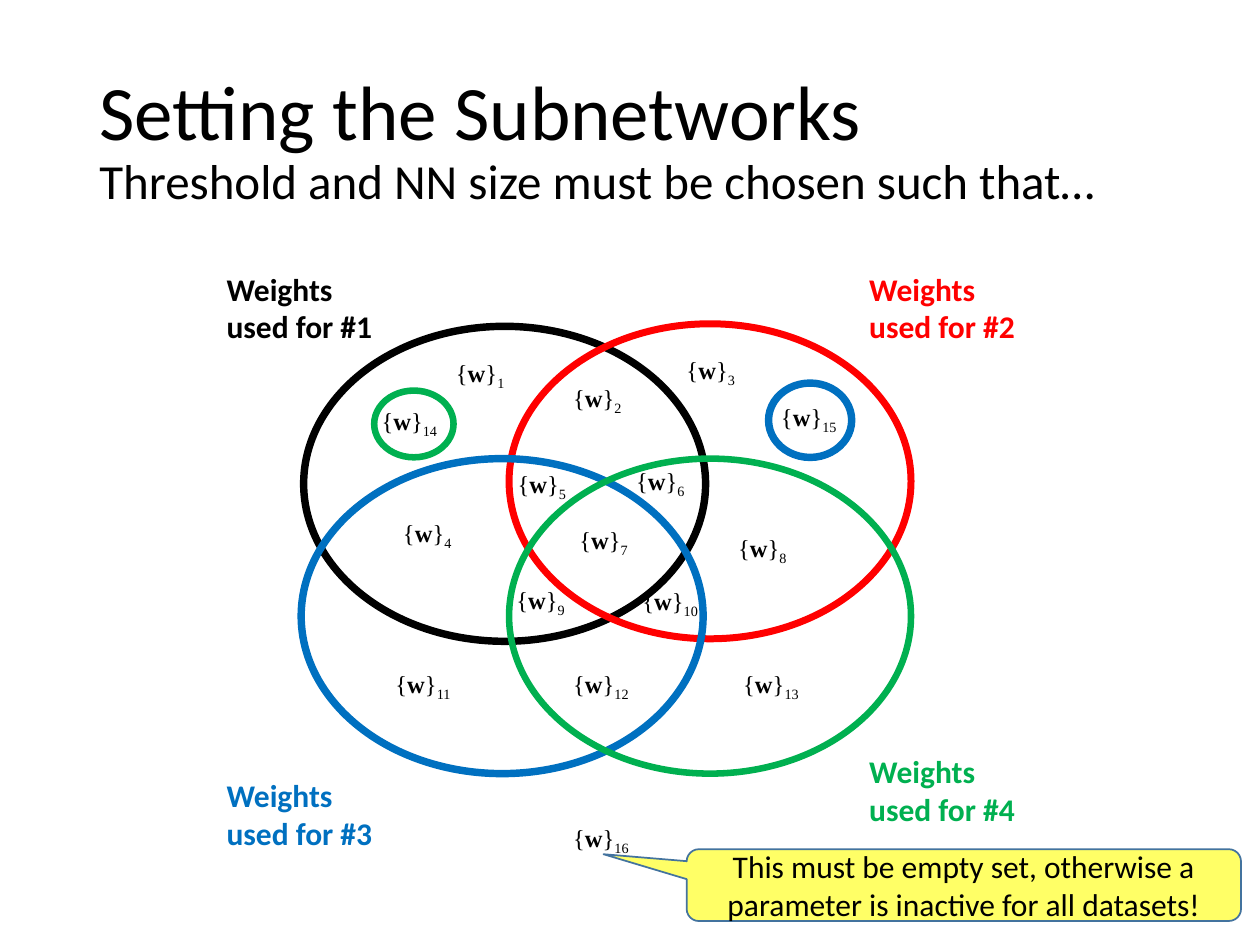
from dataclasses import dataclass

from pptx import Presentation
from pptx.dml.color import RGBColor as RGB
from pptx.enum.shapes import MSO_SHAPE as Shape
from pptx.enum.text import MSO_ANCHOR as Anchor, MSO_AUTO_SIZE as Auto, PP_ALIGN as Align
from pptx.util import Emu, Pt

PX = 9144  # 100 px to the inch


@dataclass(frozen=True)
class Theme:
    black: str = "000000"
    red: str = "FF0000"
    blue: str = "0070C0"
    green: str = "00B050"
    note: str = "FFFF66"
    edge: str = "43739E"
    sans: str = "Calibri"
    serif: str = "Times New Roman"
    title: int = 44
    lead: int = 28
    body: int = 18
    math: int = 14


T = Theme()

# Centre-line ellipses, one for each dataset: left, top, colour, line width
SETS = [
    (241, 259, T.black, 4.25),
    (404, 257, T.red, 4),
    (239, 364, T.blue, 4.25),
    (404, 364, T.green, 3.75),
]
# Dataset captions: number, left, top, colour
NAMES = [
    (1, 170, 209, T.black),
    (2, 680, 209, T.red),
    (4, 680, 592, T.green),
    (3, 170, 611, T.blue),
]
# Weight groups by region: index -> left, top
GROUPS = {
    1: (352, 279), 2: (445, 299), 3: (535, 277), 4: (310, 406),
    5: (401, 367), 6: (495, 365), 9: (400, 459), 10: (500, 460),
    7: (450, 412), 8: (576, 418), 11: (304, 526), 12: (445, 526),
    13: (580, 526), 16: (445, 648),
}
# Small rings: box, colour, line width, weight index, label left and top
RINGS = [
    ((297, 310, 63, 53), T.green, 3.75, 14, 293, 317),
    ((610, 304, 66, 59), T.blue, 4.25, 15, 610, 314),
]


def scale(box):
    return [Emu(n * PX) for n in box]


def style(item, **values):
    for name, value in values.items():
        setattr(item, name, value)


def write(para, text, size, color=T.black, face=T.sans, bold=False):
    run = para.add_run()
    run.text = text
    style(run.font, size=Pt(size), name=face, bold=bold)
    run.font.color.rgb = RGB.from_string(color)
    return run


def text_box(slide, box, **frame):
    area = slide.shapes.add_textbox(*scale(box)).text_frame
    style(area, **{"word_wrap": True, "auto_size": Auto.SHAPE_TO_FIT_TEXT, **frame})
    return area.paragraphs[0]


def outline(slide, kind, box, color, width, fill=None):
    shape = slide.shapes.add_shape(kind, *scale(box))
    shape.shadow.inherit = False
    if fill:
        shape.fill.solid()
        shape.fill.fore_color.rgb = RGB.from_string(fill)
    else:
        shape.fill.background()
    shape.line.color.rgb = RGB.from_string(color)
    shape.line.width = Pt(width)
    return shape


def title(slide):
    para = text_box(slide, (69, 40, 862, 145),
                    auto_size=Auto.NONE, vertical_anchor=Anchor.MIDDLE)
    para.line_spacing = 0.9
    write(para, "Setting the Subnetworks", T.title)
    para.add_line_break()
    write(para, "Threshold and NN size must be chosen such that…", T.lead)


def group(slide, index, left, top):
    para = text_box(slide, (left, top, 100, 34))
    for text, bold in (("{", False), ("w", True), ("}", False)):
        write(para, text, T.math, face=T.serif, bold=bold)
    sub = write(para, str(index), T.math, face=T.serif)
    sub.font._element.set("baseline", "-25000")


def callout(slide):
    shape = outline(slide, Shape.ROUNDED_RECTANGULAR_CALLOUT,
                    (545, 674, 440, 57), T.edge, 1, T.note)
    for i, value in enumerate((-0.65, -0.43, 0.17)):
        shape.adjustments[i] = value
    area = shape.text_frame
    style(area, word_wrap=True, vertical_anchor=Anchor.MIDDLE)
    para = area.paragraphs[0]
    para.alignment = Align.CENTER
    write(para, "This must be empty set, otherwise a parameter "
                "is inactive for all datasets!", T.body)


def main():
    deck = Presentation()
    deck.slide_width, deck.slide_height = scale((1000, 750))
    slide = deck.slides.add_slide(deck.slide_layouts[6])
    title(slide)

    # Four overlapping sets and their regions
    for left, top, color, width in SETS:
        outline(slide, Shape.OVAL, (left, top, 319, 250), color, width)
    for index, spot in GROUPS.items():
        group(slide, index, *spot)

    # Captions and remark
    for number, left, top, color in NAMES:
        para = text_box(slide, (left, top, 153, 71))
        write(para, f"Weights used for #{number}", T.body, color, bold=True)
    callout(slide)

    # Rings inside the upper sets
    for box, color, width, index, left, top in RINGS:
        outline(slide, Shape.OVAL, box, color, width)
        group(slide, index, left, top)

    deck.save("out.pptx")


if __name__ == "__main__":
    main()
